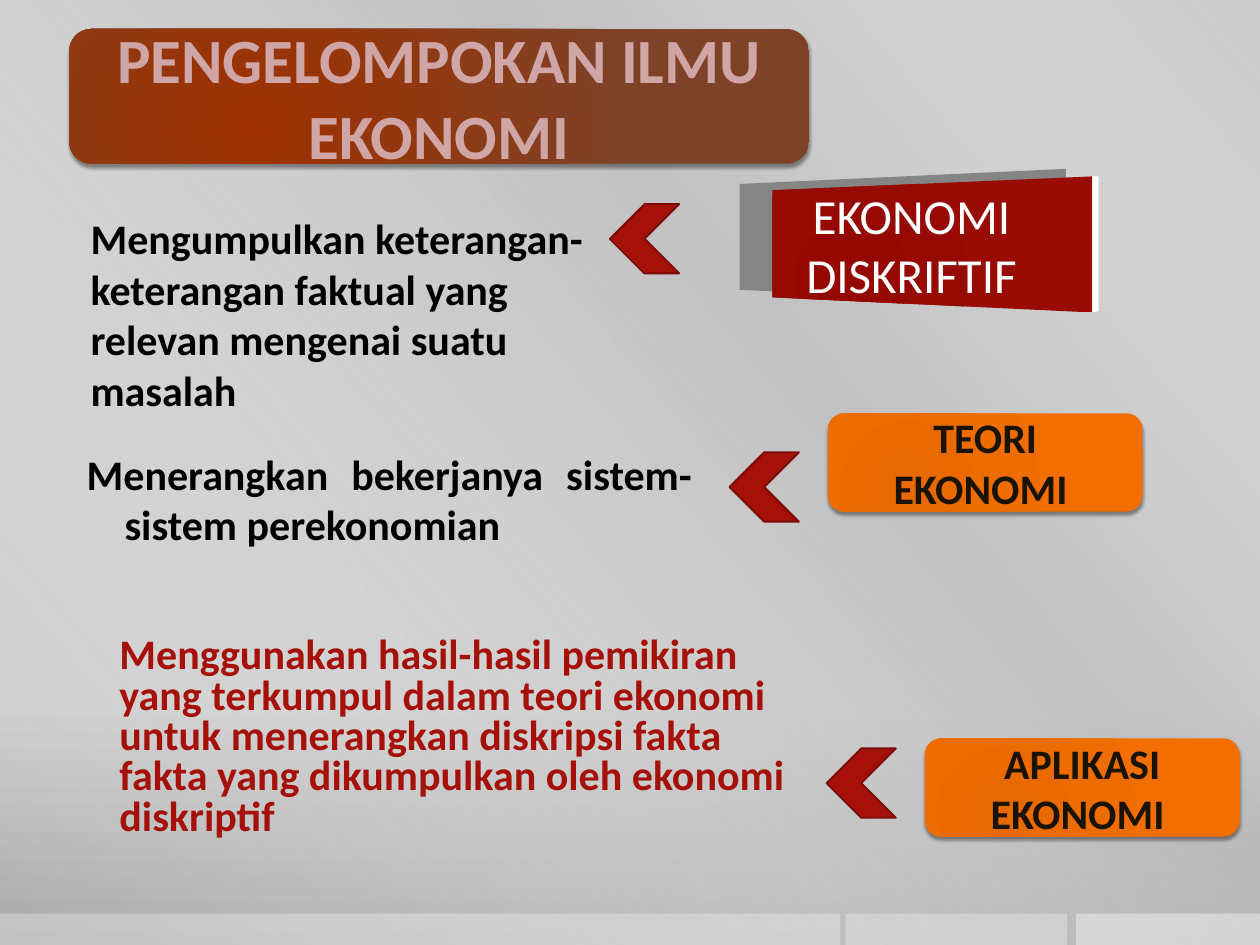
from lxml.etree import SubElement
from pptx import Presentation
from pptx.dml.color import RGBColor
from pptx.enum.shapes import MSO_SHAPE
from pptx.enum.text import MSO_ANCHOR, PP_ALIGN
from pptx.oxml.ns import qn
from pptx.util import Inches, Pt

HUES = {
    "white": "FFFFFF", "black": "000000", "gray": "858585", "mid": "BFBFBF",
    "pale": "CBCBCB", "soft": "C8C8C8", "dim": "A7A7A7", "rose": "D0A5A5",
    "rust": "9F3100", "brown": "7E4228", "amber": "E76900", "orange": "F26E00",
    "red": "A51009", "dark": "7A0C07", "blood": "950800", "wine": "980C05",
    "ink": "1B1302",
}


class Deck:
    """Hold the style and the current slide."""

    def __init__(self, font):
        self.font = font
        self.show = Presentation()
        self.show.slide_width = Inches(10)
        self.show.slide_height = Inches(7.5)
        self.slide = self.show.slides.add_slide(self.show.slide_layouts[6])

    def tint(self, node, hue, alpha=100):
        color = SubElement(node, qn("a:srgbClr"), val=HUES[hue])
        if alpha < 100:
            SubElement(color, qn("a:alpha"), val=str(alpha * 1000))

    def blend(self, fill, root, stops, angle=None):
        fill.gradient()
        grad = next(root.iter(qn("a:gradFill")))
        for child in list(grad):
            grad.remove(child)
        items = SubElement(grad, qn("a:gsLst"))
        for pos, hue, alpha in stops:
            stop = SubElement(items, qn("a:gs"), pos=str(pos * 1000))
            self.tint(stop, hue, alpha)
        if angle is None:
            way = SubElement(grad, qn("a:path"), path="circle")
            SubElement(way, qn("a:fillToRect"), l="50000", t="100000",
                       r="100000", b="50000")
        else:
            SubElement(grad, qn("a:lin"), ang=str(angle * 60000), scaled="0")

    def back(self, stops):
        ground = self.slide.background
        self.blend(ground.fill, self.slide.element, stops, 90)

    def shape(self, kind, box):
        item = self.slide.shapes.add_shape(kind, *map(Inches, box))
        item.shadow.inherit = False
        item.line.fill.background()
        return item

    def plain(self, item, hue):
        item.fill.solid()
        item.fill.fore_color.rgb = RGBColor.from_string(HUES[hue])

    def panel(self, box, alpha):
        item = self.shape(MSO_SHAPE.RECTANGLE, box)
        self.plain(item, "white")
        color = next(item.element.spPr.iter(qn("a:srgbClr")))
        SubElement(color, qn("a:alpha"), val=str(alpha * 1000))

    def sheen(self, stops):
        item = self.shape(MSO_SHAPE.RECTANGLE, (0, 0, 10, 7.5))
        self.blend(item.fill, item.element.spPr, stops, 140)

    def label(self, item, lines, size, hue, bold=True,
              align=PP_ALIGN.LEFT, left=0, first=0, space=None):
        frame = item.text_frame
        frame.word_wrap = True
        for num, line in enumerate(lines):
            para = frame.add_paragraph() if num else frame.paragraphs[0]
            para.alignment = align
            para.line_spacing = space
            if left:
                props = para._p.get_or_add_pPr()
                props.set("marL", str(Inches(left)))
                props.set("indent", str(Inches(first)))
            run = para.add_run()
            run.text = line
            run.font.name = self.font
            run.font.size = Pt(size)
            run.font.bold = bold
            run.font.color.rgb = RGBColor.from_string(HUES[hue])

    def badge(self, box, text, size, hue, start, end):
        item = self.shape(MSO_SHAPE.ROUNDED_RECTANGLE, box)
        props = item.element.spPr
        self.blend(item.fill, props, [(0, start, 100), (100, end, 100)])
        shade = SubElement(props.find(qn("a:effectLst")), qn("a:outerShdw"),
                           blurRad=str(Pt(2)), dist=str(Pt(2)),
                           dir="5400000", rotWithShape="0")
        self.tint(shade, "black", 40)
        item.text_frame.vertical_anchor = MSO_ANCHOR.MIDDLE
        self.label(item, [text], size, hue, align=PP_ALIGN.CENTER)

    def note(self, box, lines, hue, **style):
        item = self.slide.shapes.add_textbox(*map(Inches, box))
        self.label(item, lines, 24, hue, **style)

    def face(self, points, hue):
        spots = [(Inches(x), Inches(y)) for x, y in points]
        pen = self.slide.shapes.build_freeform(*spots[0], scale=1.0)
        pen.add_line_segments(spots[1:], close=True)
        item = pen.convert_to_shape()
        item.shadow.inherit = False
        item.line.fill.background()
        self.plain(item, hue)
        return item

    def sign(self, text):
        self.face([(5.87, 1.46), (8.46, 1.34), (8.46, 2.42), (5.87, 2.3)],
                  "gray")
        self.face([(8.67, 1.4), (8.72, 1.4), (8.72, 2.47), (8.67, 2.48)],
                  "white")
        front = self.face([(6.13, 1.51), (8.67, 1.4), (8.67, 2.48),
                           (6.13, 2.36)], "blood")
        self.blend(front.fill, front.element.spPr,
                   [(0, "blood", 100), (100, "wine", 100)])
        front.text_frame.vertical_anchor = MSO_ANCHOR.MIDDLE
        front.text_frame.margin_right = Inches(0.43)
        self.label(front, [text], 28, "white", False, PP_ALIGN.CENTER)

    def arrow(self, left, top):
        item = self.shape(MSO_SHAPE.CHEVRON, (left, top, 0.55, 0.55))
        item.rotation = 180
        self.plain(item, "red")
        item.line.color.rgb = RGBColor.from_string(HUES["dark"])
        item.line.width = Pt(1.1)


def main():
    deck = Deck("Calibri")
    deck.back([(0, "pale", 100), (76, "soft", 100), (100, "dim", 100)])
    deck.sheen([(0, "white", 0), (34, "mid", 61), (38, "mid", 76),
                (100, "white", 0)])
    for left, width, alpha in [(8.54, 1.46, 40), (6.71, 1.76, 30),
                               (0, 6.67, 30)]:
        deck.panel((left, 7.25, width, 0.25), alpha)

    deck.badge((0.55, 0.23, 5.87, 1.07), "PENGELOMPOKAN ILMU EKONOMI",
               36, "rose", "rust", "brown")
    deck.sign("EKONOMI DISKRIFTIF")
    for left, top, text in [(6.57, 3.28, "TEORI EKONOMI "),
                            (7.34, 5.86, "APLIKASI EKONOMI ")]:
        deck.badge((left, top, 2.5, 0.78), text, 24, "ink",
                   "amber", "orange")

    deck.note((0.62, 1.64, 4.38, 1.72),
              ["Mengumpulkan keterangan-keterangan faktual yang relevan "
               "mengenai suatu masalah"], "black")
    deck.note((0.59, 3.51, 5, 0.91),
              ["Menerangkan bekerjanya sistem-sistem perekonomian"],
              "black", align=PP_ALIGN.JUSTIFY, left=0.3, first=-0.3)
    deck.note((0.35, 5.01, 6.17, 1.99),
              ["Menggunakan hasil-hasil pemikiran",
               "yang terkumpul dalam teori ekonomi",
               "untuk menerangkan diskripsi fakta",
               "fakta yang dikumpulkan oleh ekonomi",
               "diskriptif"], "red", left=0.5, space=0.8)
    for left, top in [(4.84, 1.62), (5.79, 3.59), (6.56, 5.94)]:
        deck.arrow(left, top)
    deck.show.save("out.pptx")


if __name__ == "__main__":
    main()
